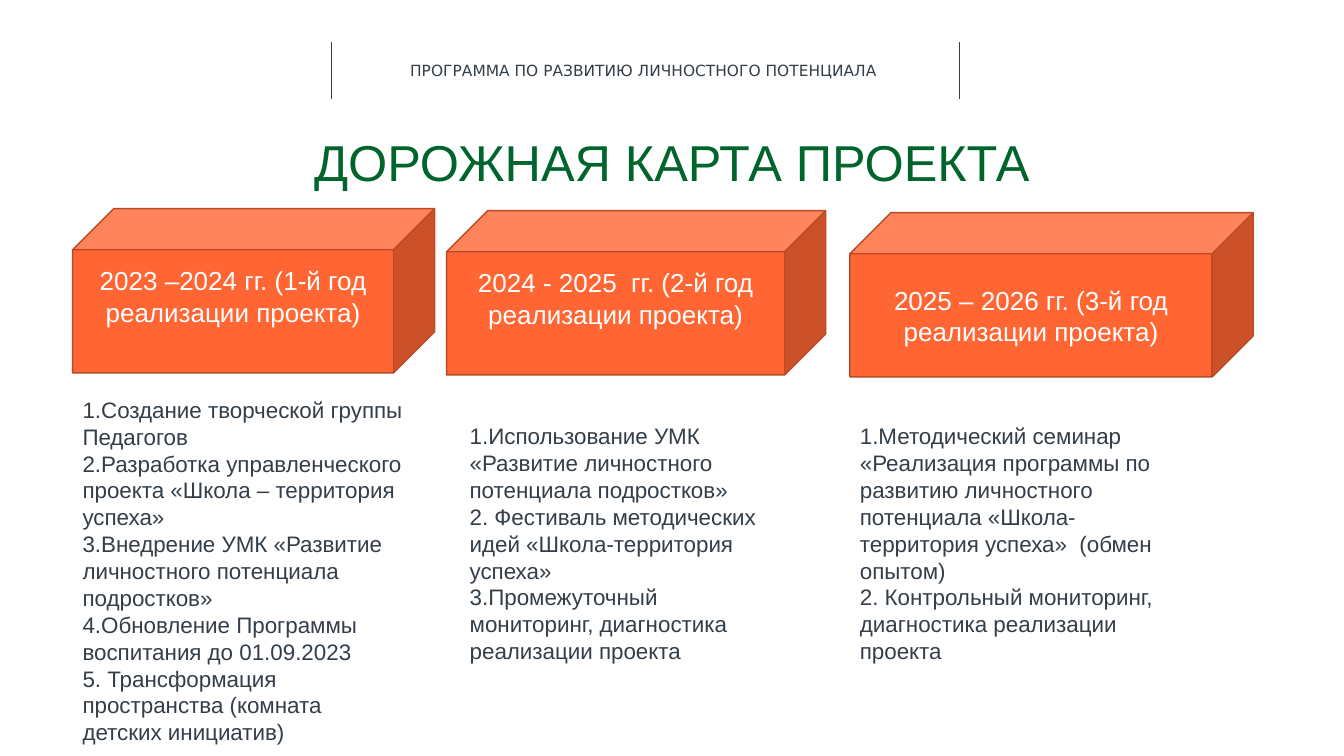
import pptx
import pptx.dml.color
import pptx.enum.shapes
import pptx.enum.text
import pptx.oxml.ns
import pptx.util
import lxml.etree

Inches = pptx.util.Inches
Pt = pptx.util.Pt
ALIGN = pptx.enum.text.PP_ALIGN
ANCHOR = pptx.enum.text.MSO_ANCHOR

GREEN, ORANGE, RUST, SLATE, WHITE = "00642D", "FF6633", "BA4A25", "333E48", "FFFFFF"


def color(value):
    return pptx.dml.color.RGBColor.from_string(value)


class RoadmapSlide:
    font = "Arial"

    def __init__(self, presentation):
        self.slide = presentation.slides.add_slide(presentation.slide_layouts[5])
        self.slide.background.fill.solid()
        self.slide.background.fill.fore_color.rgb = color(WHITE)

    def fill_frame(self, frame, texts, size, ink, align=ALIGN.LEFT, anchor=ANCHOR.TOP,
                   font=None, insets=(0.1, 0.05, 0.1, 0.05), spacing=1.0):
        frame.word_wrap = True
        frame.auto_size = pptx.enum.text.MSO_AUTO_SIZE.NONE
        frame.vertical_anchor = anchor
        (frame.margin_left, frame.margin_top,
         frame.margin_right, frame.margin_bottom) = map(Inches, insets)
        for index, text in enumerate(texts):
            paragraph = frame.add_paragraph() if index else frame.paragraphs[0]
            paragraph.alignment = align
            paragraph.line_spacing = spacing
            paragraph.space_before = Pt(0)
            run = paragraph.add_run()
            run.text = text
            run.font.size = Pt(size)
            run.font.name = font or self.font
            run.font.color.rgb = color(ink)

    def title(self, text, left, top, width, height):
        shape = self.slide.shapes.title
        shape.left, shape.top = Inches(left), Inches(top)
        shape.width, shape.height = Inches(width), Inches(height)
        self.fill_frame(shape.text_frame, [text], 36, GREEN, ALIGN.CENTER,
                        insets=(0, 0, 0, 0), spacing=0.9)

    def text(self, texts, left, top, width, height, size=16, font=None):
        shape = self.slide.shapes.add_textbox(
            Inches(left), Inches(top), Inches(width), Inches(height))
        self.fill_frame(shape.text_frame, texts, size, SLATE, font=font)

    def vertical_rule(self, x, top, bottom):
        rule = self.slide.shapes.add_connector(
            pptx.enum.shapes.MSO_CONNECTOR.STRAIGHT,
            Inches(x), Inches(top), Inches(x), Inches(bottom))
        rule.line.color.rgb = color(SLATE)
        rule.line.width = Pt(0.75)
        properties = rule._element.spPr
        lxml.etree.SubElement(properties, pptx.oxml.ns.qn("a:effectLst"))

    def cube(self, text, left, top, width, bottom_inset):
        shape = self.slide.shapes.add_shape(
            pptx.enum.shapes.MSO_SHAPE.CUBE,
            Inches(left), Inches(top), Inches(width), Inches(1.63))
        shape.shadow.inherit = False
        shape.adjustments[0] = 0.25
        shape.fill.solid()
        shape.fill.fore_color.rgb = color(ORANGE)
        shape.line.color.rgb = color(RUST)
        shape.line.width = Pt(1)
        self.fill_frame(shape.text_frame, [text], 18.6, WHITE, ALIGN.CENTER,
                        ANCHOR.MIDDLE, insets=(0.1, 0.05, 0.1, bottom_inset))


STAGES = [
    ("2023 –2024 гг. (1-й год реализации проекта)", (0.72, 2.07, 3.59, 0.35),
     (0.72, 3.88, 3.38, 3.6), [
         "1.Создание творческой группы",
         "Педагогов",
         "2.Разработка управленческого проекта «Школа – территория успеха»",
         "3.Внедрение УМК «Развитие личностного потенциала подростков»",
         "4.Обновление Программы воспитания до 01.09.2023",
         "5. Трансформация пространства (комната детских инициатив)"]),
    ("2024 - 2025  гг. (2-й год реализации проекта)", (4.43, 2.09, 3.76, 0.35),
     (4.56, 4.14, 3.11, 2.79), [
         "1.Использование УМК «Развитие личностного потенциала подростков»",
         "2. Фестиваль методических идей «Школа-территория успеха»",
         "3.Промежуточный мониторинг, диагностика реализации проекта"]),
    ("2025 – 2026 гг. (3-й год реализации проекта)", (8.43, 2.11, 4, 0.05),
     (8.43, 4.14, 3.41, 2.52), [
         "1.Методический семинар «Реализация программы по развитию личностного "
         "потенциала «Школа-территория успеха»  (обмен опытом)",
         "2. Контрольный мониторинг, диагностика реализации проекта"]),
]


def main():
    presentation = pptx.Presentation()
    presentation.slide_width = Inches(13.33)
    presentation.slide_height = Inches(7.5)
    roadmap = RoadmapSlide(presentation)
    for x in (3.29, 9.52):
        roadmap.vertical_rule(x, 0.42, 0.98)
    roadmap.text(["ПРОГРАММА ПО РАЗВИТИЮ ЛИЧНОСТНОГО ПОТЕНЦИАЛА"],
                 3.97, 0.56, 4.87, 0.29, size=11, font="DejaVu Sans")
    roadmap.title("ДОРОЖНАЯ КАРТА ПРОЕКТА", 0.1, 1.37, 13.13, 0.56)
    for heading, cube_place, list_place, tasks in STAGES:
        roadmap.cube(heading, *cube_place)
        roadmap.text(tasks, *list_place)
    presentation.save("out.pptx")


if __name__ == "__main__":
    main()
